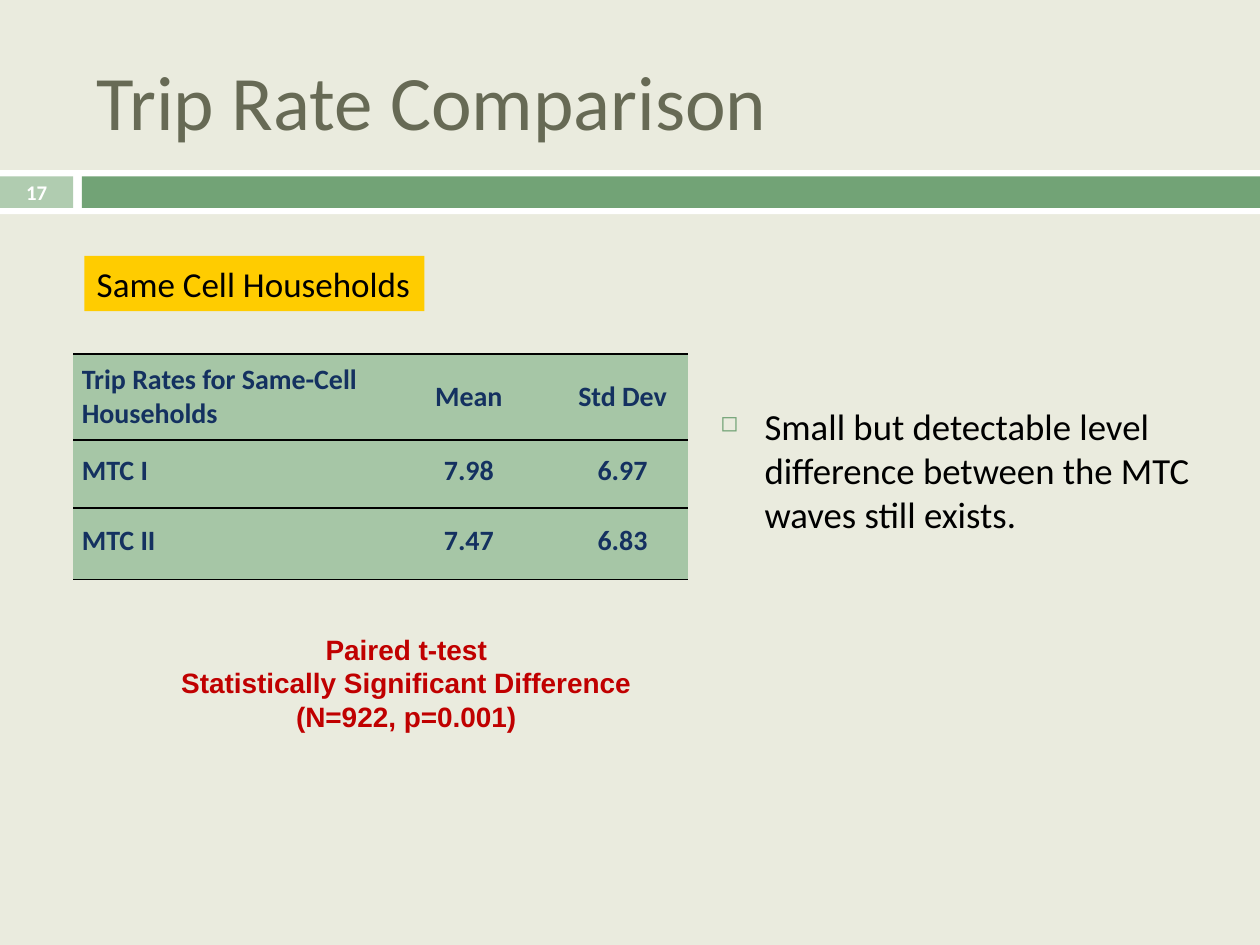
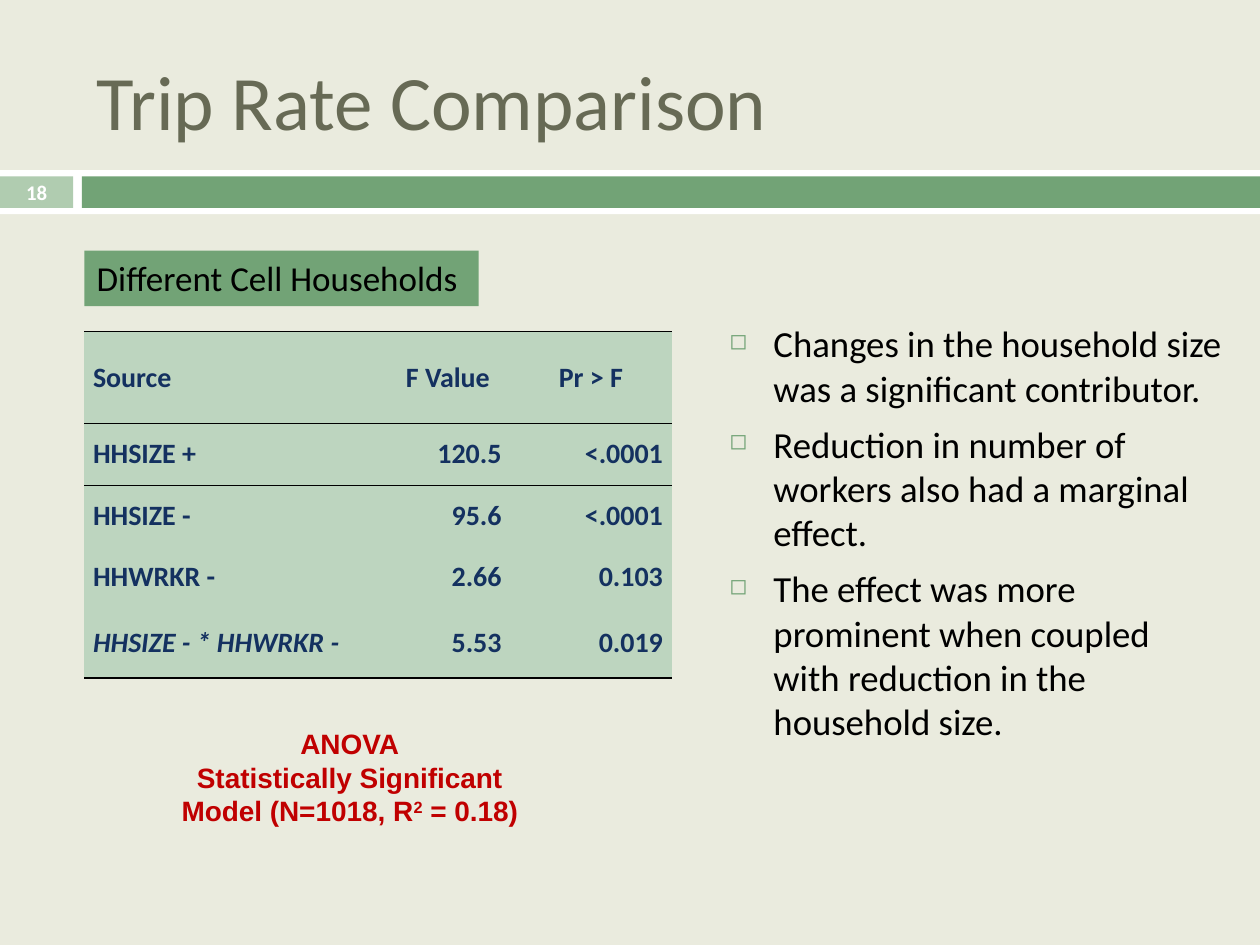
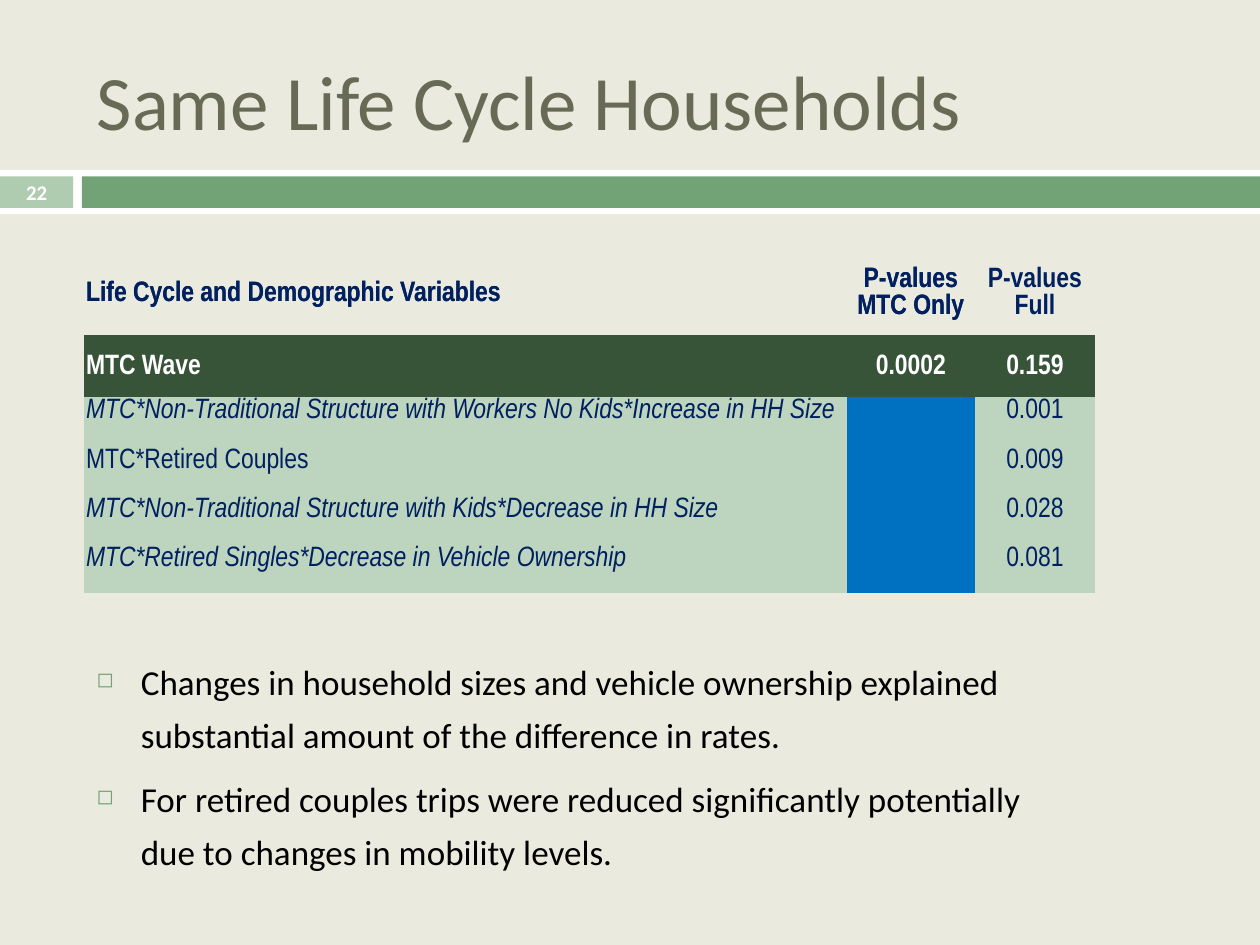
import lxml.etree
import pptx
import pptx.dml.color
import pptx.enum.shapes
import pptx.enum.text
import pptx.oxml
import pptx.oxml.ns
import pptx.util

Pt = pptx.util.Pt
ALIGN = pptx.enum.text.PP_ALIGN
ANCHOR = pptx.enum.text.MSO_ANCHOR
RECTANGLE = pptx.enum.shapes.MSO_SHAPE.RECTANGLE
NO_GRID_STYLE = "{2D5ABB26-0587-4C30-8999-92F81FD0307C}"

BACKGROUND, GREEN, PALE_GREEN = "EAEBDE", "72A376", "B0CCB0"
TABLE_GREEN, TABLE_PALE, TABLE_DARK, NOT_TESTED = "A6C6A6", "BDD5BF", "375439", "0070C0"
WHITE, BLACK, NAVY, DEEP_NAVY = "FFFFFF", "000000", "143160", "002060"

TITLE = {"name": "Calibri", "size": Pt(44)}
PAGE_NUMBER = {"name": "Calibri", "size": Pt(11.9), "bold": True}
LABEL = {"name": "Calibri", "size": Pt(20)}
FINDING = {"name": "Arial", "size": Pt(16), "bold": True}
BANDS = [(0, 97.2, 720, 25.2, WHITE), (0, 100.8, 41.8, 18, PALE_GREEN),
         (46.8, 100.8, 673.2, 18, GREEN)]
BULLET_XML = ('<a:buClr {0}><a:srgbClr val="' + GREEN + '"/></a:buClr>',
              '<a:buSzPct {0} val="60000"/>', '<a:buChar {0} char="◻"/>')
DRAWING_NS = pptx.oxml.ns.nsdecls("a")


def colour(hex_string):
    return pptx.dml.color.RGBColor.from_string(hex_string)


def write(frame, texts, font, ink, bulleted=False, margins=(7.2, 3.6, 7.2, 3.6),
          anchor=ANCHOR.TOP, **layout):
    """Fill a frame with paragraphs; text between ^ marks is superscript."""
    frame.word_wrap = True
    frame.vertical_anchor = anchor
    for side, margin in zip(("left", "top", "right", "bottom"), margins):
        setattr(frame, f"margin_{side}", Pt(margin))
    for number, text in enumerate(texts):
        paragraph = frame.add_paragraph() if number else frame.paragraphs[0]
        for name, value in layout.items():
            if number or name != "space_before":
                setattr(paragraph, name, value)
        if bulleted:
            properties = paragraph._p.get_or_add_pPr()
            properties.set("marL", str(Pt(25.2)))
            properties.set("indent", str(-Pt(25.2)))
            for xml in BULLET_XML:
                properties.append(pptx.oxml.parse_xml(xml.format(DRAWING_NS)))
        for part_number, part in enumerate(text.split("^")):
            run = paragraph.add_run()
            run.text = part
            for name, value in font.items():
                setattr(run.font, name, value)
            run.font.color.rgb = colour(ink)
            if part_number % 2:
                run.font._element.set("baseline", "30000")


same_cell_rates = {
    "at": (41.8, 202.3), "columns": [175.7, 100.8, 74.9], "heights": [49, 38.9, 41],
    "cells": [["Trip Rates for Same-Cell Households", "Mean", "Std Dev"],
              ["MTC I", "7.98", "6.97"],
              ["MTC II", "7.47", "6.83"]],
    "fills": [TABLE_GREEN] * 3, "font": "Calibri", "inks": [NAVY] * 3,
    "bold_rows": 3, "italic_rows": (), "ruled": True, "body_align": ALIGN.CENTER,
    "body_spacing": 0.7, "margins": (5, 0, 5, 0), "middle_rows": 3,
}
different_cell_anova = {
    "at": (48.2, 189.4), "columns": [172.1, 71.3, 92.2],
    "heights": [52.6, 35.3, 34.6, 35.3, 40.3],
    "cells": [["Source", "F Value", "Pr > F"],
              ["HHSIZE +", "120.5", "<.0001"],
              ["HHSIZE -", "95.6", "<.0001"],
              ["HHWRKR -", "2.66", "0.103"],
              ["HHSIZE - * HHWRKR -", "5.53", "0.019"]],
    "fills": [TABLE_PALE] * 5, "font": "Calibri", "inks": [NAVY] * 5,
    "bold_rows": 5, "italic_rows": (4,), "ruled": True, "body_align": ALIGN.RIGHT,
    "body_spacing": 1.0, "margins": (5, 0, 5, 0), "middle_rows": 5,
}
life_cycle_full = {
    "at": (48.2, 143.3), "columns": [435.6, 73.4, 68.4],
    "heights": [48.2, 35.3] + [28.1] * 4,
    "cells": [["Life Cycle and Demographic Variables", "P-values MTC Only", "P-values Full"],
              ["MTC Wave", "0.0002", "0.159"],
              ["MTC*Non-Traditional Structure with Workers No Kids*Increase in HH Size",
               "", "0.001"],
              ["MTC*Retired Couples", "", "0.009"],
              ["MTC*Non-Traditional Structure with Kids*Decrease in HH Size", "", "0.028"],
              ["MTC*Retired Singles*Decrease in Vehicle Ownership", "", "0.081"]],
    "fills": [None, TABLE_DARK] + [TABLE_PALE] * 4, "font": "Arial Narrow",
    "inks": [DEEP_NAVY, WHITE] + [DEEP_NAVY] * 4,
    "bold_rows": 2, "italic_rows": (2, 4, 5), "ruled": False, "body_align": ALIGN.CENTER,
    "body_spacing": 1.0, "margins": (1, 1, 1, 0), "middle_rows": 2,
}
life_cycle_mtc_only = {**life_cycle_full, "columns": life_cycle_full["columns"][:2],
                       "heights": life_cycle_full["heights"][:2]}

pages = [
    {"title": "Trip Rate Comparison", "number": "17", "tables": [same_cell_rates],
     "label": ("Same Cell Households", "FFCC00", (48.2, 146.2, 194.4, 31.7)),
     "finding": (["Paired t-test", "Statistically Significant Difference",
                  "(N=922, p=0.001)"], (89.3, 357.8, 285.8, 65.5)),
     "bullets": (["Small but detectable level difference between the MTC waves still exists."],
                 (404.6, 227, 301.7, 105), 21, 1.0)},
    {"title": "Trip Rate Comparison", "number": "18", "tables": [different_cell_anova],
     "label": ("Different Cell Households", GREEN, (48.2, 143.3, 225.4, 31.7)),
     "finding": (["ANOVA", "Statistically Significant Model (N=1018, R^2^ = 0.18)"],
                 (81.4, 411.8, 236.9, 64.8)),
     "bullets": (["Changes in the household size was a significant contributor.",
                  "Reduction in number of workers also had a marginal effect.",
                  "The effect was more prominent when coupled with reduction in the "
                  "household size."], (409.7, 180, 295.9, 250.6), 21, 1.0)},
    {"title": "Same Life Cycle Households", "number": "22",
     "tables": [life_cycle_mtc_only, life_cycle_full], "label": None, "finding": None,
     "bullets": (["Changes in household sizes and vehicle ownership explained substantial "
                  "amount of the difference in rates.",
                  "For retired couples trips were reduced significantly potentially due to "
                  "changes in mobility levels."], (48.2, 367.9, 577.4, 135.4), 20, 1.25)},
]

deck = pptx.Presentation()
deck.slide_width, deck.slide_height = Pt(720), Pt(540)

for page in pages:
    slide = deck.slides.add_slide(deck.slide_layouts[6])
    slide.background.fill.solid()
    slide.background.fill.fore_color.rgb = colour(BACKGROUND)

    blocks = list(BANDS)
    if page["label"]:
        label_text, label_fill, label_box = page["label"]
        blocks.append((*label_box, label_fill))
    for *box, fill in blocks:
        block = slide.shapes.add_shape(RECTANGLE, *map(Pt, box))
        block.shadow.inherit = False
        block.fill.solid()
        block.fill.fore_color.rgb = colour(fill)
        block.line.fill.background()
    if page["label"]:
        write(block.text_frame, [label_text], LABEL, BLACK, alignment=ALIGN.LEFT)

    title = slide.shapes.add_textbox(Pt(48.2), Pt(18), Pt(642.2), Pt(77.8))
    write(title.text_frame, [page["title"]], TITLE, "676A55", anchor=ANCHOR.MIDDLE)
    page_number = slide.shapes.add_textbox(Pt(0), Pt(100.1), Pt(41.8), Pt(19.4))
    write(page_number.text_frame, [page["number"]], PAGE_NUMBER, WHITE,
          margins=(0, 0, 0, 0), anchor=ANCHOR.MIDDLE, alignment=ALIGN.CENTER)

    for data in page["tables"]:
        columns, heights = data["columns"], data["heights"]
        table = slide.shapes.add_table(len(heights), len(columns), *map(Pt, data["at"]),
                                       Pt(sum(columns)), Pt(sum(heights))).table
        table.first_row = table.horz_banding = False
        table._tbl.tblPr.find(pptx.oxml.ns.qn("a:tableStyleId")).text = NO_GRID_STYLE
        for column, width in zip(table.columns, columns):
            column.width = Pt(width)
        for r, height in enumerate(heights):
            table.rows[r].height = Pt(height)
            for c in range(len(columns)):
                cell, text = table.cell(r, c), data["cells"][r][c]
                fill = data["fills"][r] if text else NOT_TESTED
                if fill:
                    cell.fill.solid()
                    cell.fill.fore_color.rgb = colour(fill)
                else:
                    cell.fill.background()
                font = {"name": data["font"], "size": Pt(16), "bold": r < data["bold_rows"],
                        "italic": c == 0 and r in data["italic_rows"]}
                align = ALIGN.LEFT if c == 0 else data["body_align"] if r else ALIGN.CENTER
                write(cell.text_frame, [text], font, data["inks"][r], alignment=align,
                      line_spacing=data["body_spacing"] if r else 1.0)
                for side, margin in zip(("left", "top", "right", "bottom"), data["margins"]):
                    setattr(cell, f"margin_{side}", Pt(margin))
                cell.vertical_anchor = ANCHOR.MIDDLE if r < data["middle_rows"] else ANCHOR.TOP
                edges = {"lnB": r in (0, len(heights) - 1), "lnT": r in (0, 1)}
                for edge, drawn in edges.items():
                    if data["ruled"] and drawn:
                        cell._tc.get_or_add_tcPr().insert(0, pptx.oxml.parse_xml(
                            f'<a:{edge} {DRAWING_NS} w="{Pt(1)}"><a:solidFill>'
                            f'<a:srgbClr val="{BLACK}"/></a:solidFill></a:{edge}>'))

    if page["finding"]:
        finding_lines, box = page["finding"]
        finding = slide.shapes.add_textbox(*map(Pt, box))
        write(finding.text_frame, finding_lines, FINDING, "C00000", alignment=ALIGN.CENTER)

    points, box, size, spacing = page["bullets"]
    bullets = slide.shapes.add_textbox(*map(Pt, box))
    write(bullets.text_frame, points, {"name": "Calibri", "size": Pt(size)}, BLACK,
          bulleted=True, line_spacing=spacing, space_before=Pt(7))

deck.save("out.pptx")
